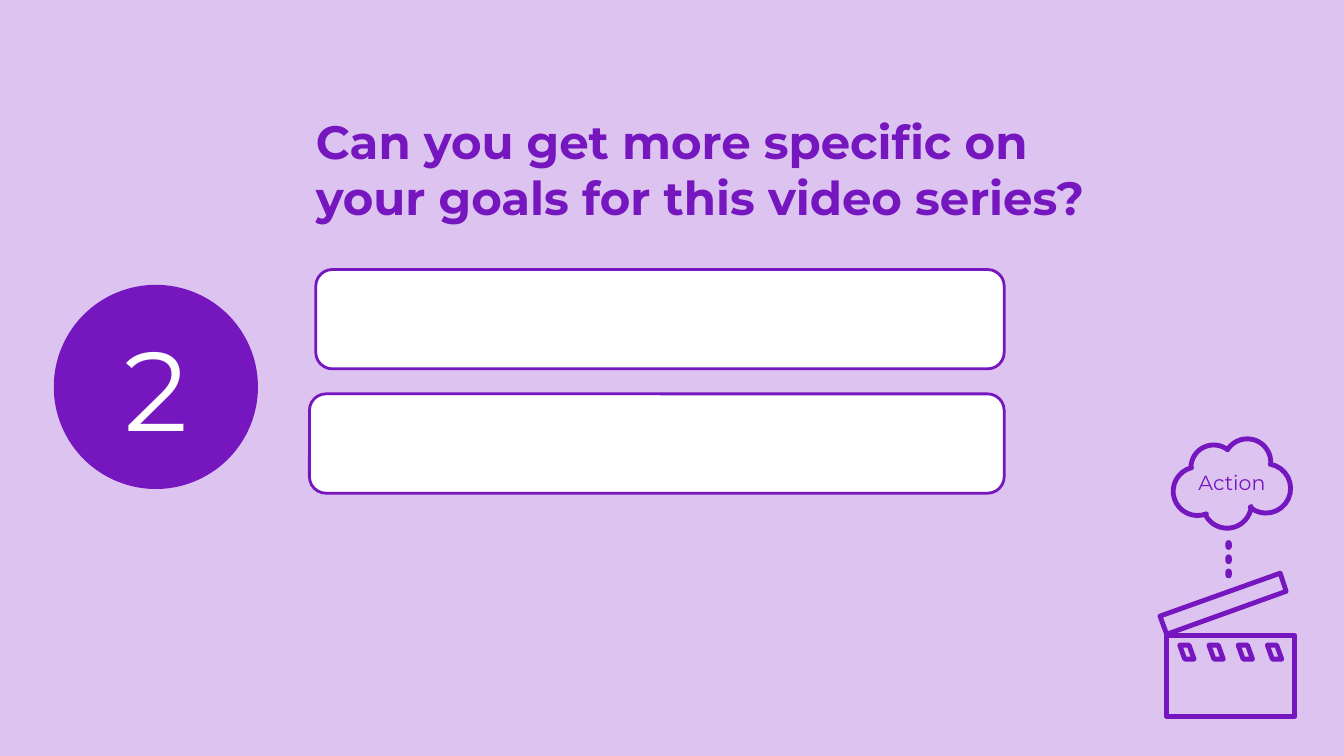
from dataclasses import dataclass
from math import cos, radians, sin

from lxml import etree
from pptx import Presentation
from pptx.dml.color import RGBColor
from pptx.enum.shapes import MSO_SHAPE
from pptx.enum.text import MSO_ANCHOR, PP_ALIGN
from pptx.oxml.ns import qn
from pptx.util import Pt

OVAL = MSO_SHAPE.OVAL
ROUNDED = MSO_SHAPE.ROUNDED_RECTANGLE
CENTER = PP_ALIGN.CENTER
LEFT = PP_ALIGN.LEFT
TOP = MSO_ANCHOR.TOP
MIDDLE = MSO_ANCHOR.MIDDLE


@dataclass(frozen=True)
class Theme:
    font: str = "Montserrat"
    background: RGBColor = RGBColor(0xDD, 0xC4, 0xF0)
    accent: RGBColor = RGBColor(0x75, 0x16, 0xBE)
    white: RGBColor = RGBColor(0xFF, 0xFF, 0xFF)
    number_size: float = 60
    title_size: float = 25
    icon_size: float = 11
    box_line: float = 1.5
    icon_line: float = 2.6


THEME = Theme()

TITLE = "Can you get more specific on your goals for this video series?"
NUMBER = "2"
ICON_WORD = "Action"

TITLE_BOX = (169.2, 60.5, 417.6, 47.5)
NUMBER_BOX = (28.8, 152.6, 109.4, 109.4)
ICON_WORD_BOX = (637, 250, 46, 17)
ANSWER_BOXES = [(169.2, 144.4, 368.8, 53.2), (165.8, 211, 372.2, 53.2)]

BOARD = [(625, 340.6), (693.7, 340.6), (693.7, 383.8), (625, 383.8)]
CLAPPER = [(685.8, 307.1), (689, 316.8), (625, 339.8), (621.4, 330.1)]
STRIPE = [(632, 345.6), (637, 345.6), (639.7, 353.1), (634.7, 353.1)]
STRIPE_COUNT, STRIPE_STEP = 4, 15.65
DOT = (656.5, 289.4, 3.4, 5.2)
DOT_COUNT, DOT_STEP = 3, 7.6

CLOUD_LOBES = [
    (650.2, 250.6, 12.2, 180, 308),
    (668.2, 247.7, 12.6, 216, 365),
    (678.2, 261.7, 13.2, 280, 490),
    (657.4, 270, 13, 6, 152),
    (641.5, 263.2, 13, 68, 256),
]
ARC_STEPS = 16


def add_filled(shapes, kind, box, color, line_color=None):
    shape = shapes.add_shape(kind, *map(Pt, box))
    shape.shadow.inherit = False
    shape.fill.solid()
    shape.fill.fore_color.rgb = color
    if line_color is None:
        shape.line.fill.background()
    else:
        shape.line.color.rgb = line_color
        shape.line.width = Pt(THEME.box_line)
    return shape


def add_outline(shapes, points):
    start, *rest = [(Pt(x), Pt(y)) for x, y in points]
    builder = shapes.build_freeform(*start)
    builder.add_line_segments(rest, close=True)
    shape = builder.convert_to_shape()
    shape.shadow.inherit = False
    shape.fill.background()
    shape.line.color.rgb = THEME.accent
    shape.line.width = Pt(THEME.icon_line)
    etree.SubElement(shape.line._get_or_add_ln(), qn("a:round"))


def write(shape, text, size, color, alignment, anchor, bold=False, wrap=True):
    frame = shape.text_frame
    frame.word_wrap = wrap
    frame.vertical_anchor = anchor
    frame.margin_left = frame.margin_right = 0
    frame.margin_top = frame.margin_bottom = 0
    paragraph = frame.paragraphs[0]
    paragraph.text = text
    paragraph.alignment = alignment
    paragraph.font.name = THEME.font
    paragraph.font.size = Pt(size)
    paragraph.font.bold = bold
    paragraph.font.color.rgb = color


def cloud_points():
    points = []
    for center_x, center_y, radius, start, end in CLOUD_LOBES:
        for step in range(ARC_STEPS + 1):
            angle = radians(start + (end - start) * step / ARC_STEPS)
            points.append((center_x + radius * cos(angle), center_y + radius * sin(angle)))
    return points


def add_icon(slide):
    shapes = slide.shapes.add_group_shape().shapes
    stripes = [
        [(x + index * STRIPE_STEP, y) for x, y in STRIPE] for index in range(STRIPE_COUNT)
    ]
    for points in [BOARD, CLAPPER, *stripes, cloud_points()]:
        add_outline(shapes, points)
    left, top, width, height = DOT
    for index in range(DOT_COUNT):
        dot = add_filled(
            shapes, ROUNDED, (left, top + index * DOT_STEP, width, height), THEME.accent
        )
        dot.adjustments[0] = 0.5
    word = shapes.add_textbox(*map(Pt, ICON_WORD_BOX))
    write(word, ICON_WORD, THEME.icon_size, THEME.accent, CENTER, MIDDLE, wrap=False)


def main():
    presentation = Presentation()
    presentation.slide_width, presentation.slide_height = Pt(720), Pt(405)
    slide = presentation.slides.add_slide(presentation.slide_layouts[6])
    slide.background.fill.solid()
    slide.background.fill.fore_color.rgb = THEME.background

    number = add_filled(slide.shapes, OVAL, NUMBER_BOX, THEME.accent)
    write(number, NUMBER, THEME.number_size, THEME.white, CENTER, MIDDLE)
    title = slide.shapes.add_textbox(*map(Pt, TITLE_BOX))
    write(title, TITLE, THEME.title_size, THEME.accent, LEFT, TOP, bold=True)
    add_icon(slide)
    for box in ANSWER_BOXES:
        add_filled(slide.shapes, ROUNDED, box, THEME.white, THEME.accent)

    presentation.save("out.pptx")


if __name__ == "__main__":
    main()
